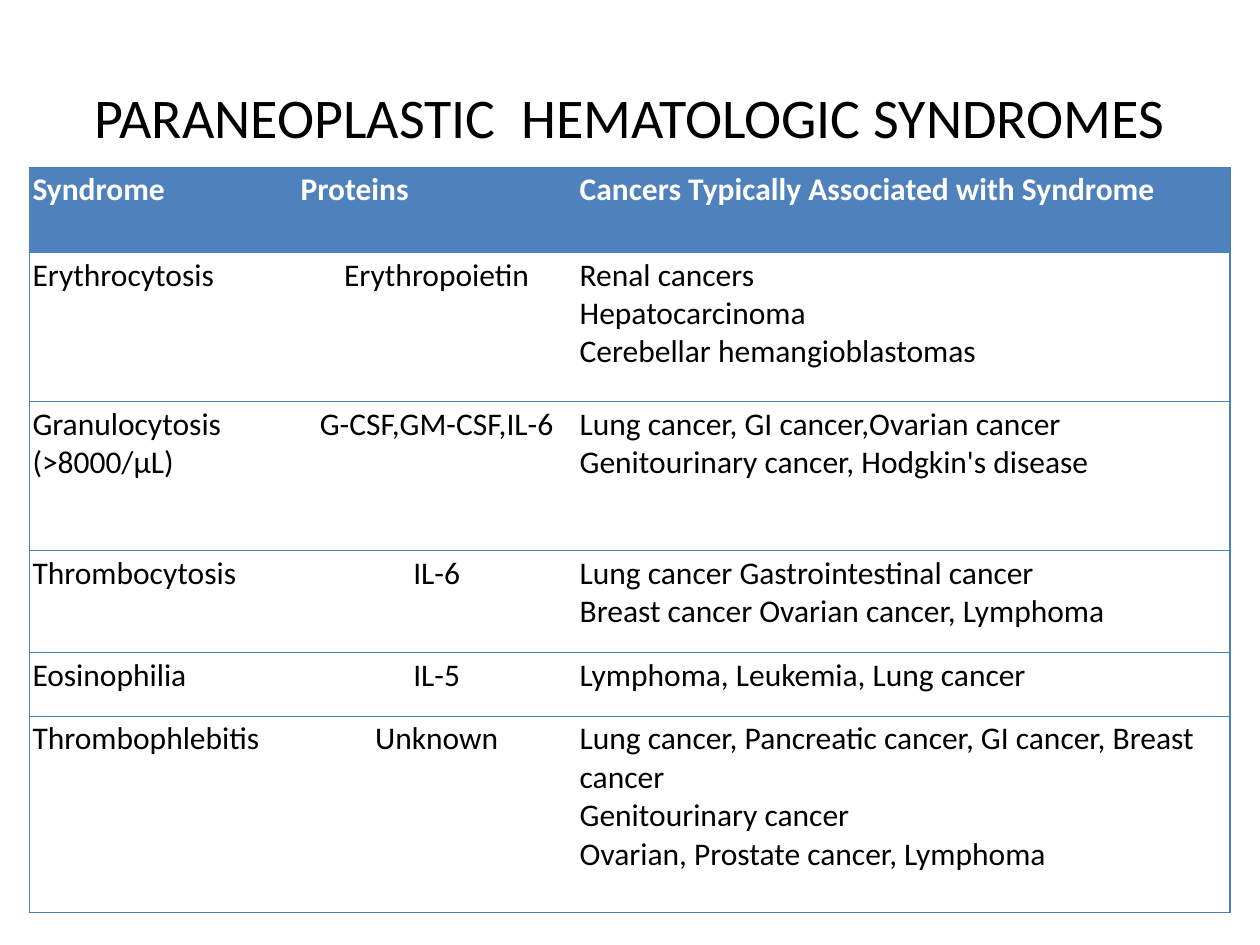
from pptx import Presentation
from pptx.dml.color import RGBColor
from pptx.enum.text import MSO_ANCHOR, PP_ALIGN
from pptx.oxml import parse_xml
from pptx.oxml.ns import nsdecls
from pptx.util import Pt

FONT = "Calibri"
BLACK, WHITE, BLUE, LINE = "000000", "FFFFFF", "4F81BD", "4B7EBC"
COLUMNS = [153.2, 159.5, 373.6]
ROWS = [
    (48.7, ["Syndrome"], ["Proteins"],
     ["Cancers Typically Associated with Syndrome"]),
    (85.2, ["Erythrocytosis"], ["Erythropoietin"],
     ["Renal cancers", "Hepatocarcinoma", "Cerebellar hemangioblastomas"]),
    (85.2, ["Granulocytosis (>8000/μL)"], ["G-CSF,GM-CSF,IL-6"],
     ["Lung cancer, GI cancer,Ovarian cancer",
      "Genitourinary cancer, Hodgkin's disease"]),
    (58.2, ["Thrombocytosis"], ["IL-6"],
     ["Lung cancer Gastrointestinal cancer",
      "Breast cancer Ovarian cancer, Lymphoma"]),
    (36.5, ["Eosinophilia"], ["IL-5"], ["Lymphoma, Leukemia, Lung cancer"]),
    (112, ["Thrombophlebitis"], ["Unknown"],
     ["Lung cancer, Pancreatic cancer, GI cancer, Breast cancer",
      "Genitourinary cancer", "Ovarian, Prostate cancer, Lymphoma"]),
]


def rgb(value):
    return RGBColor.from_string(value)


def write(tf, lines, size=18, color=BLACK, bold=False, align=PP_ALIGN.LEFT):
    tf.word_wrap = True
    for i, line in enumerate(lines):
        p = tf.add_paragraph() if i else tf.paragraphs[0]
        p.alignment = align
        r = p.add_run()
        r.text = line
        r.font.name = FONT
        r.font.size = Pt(size)
        r.font.bold = bold
        r.font.color.rgb = rgb(color)


def set_borders(cell, sides):
    tc_pr = cell._tc.get_or_add_tcPr()
    for i, side in enumerate("LRTB"):
        paint = (f'<a:solidFill><a:srgbClr val="{LINE}"/></a:solidFill>'
                 if side in sides else "<a:noFill/>")
        tc_pr.insert(i, parse_xml(
            f'<a:ln{side} {nsdecls("a")} w="{Pt(0.75)}">{paint}</a:ln{side}>'))


def add_title(s, left, top, width, height):
    sp = s.shapes.add_textbox(Pt(left), Pt(top), Pt(width), Pt(height))
    tf = sp.text_frame
    tf.vertical_anchor = MSO_ANCHOR.MIDDLE
    write(tf, ["PARANEOPLASTIC  HEMATOLOGIC SYNDROMES"], size=32,
          align=PP_ALIGN.CENTER)


def add_syndrome_table(s, left, top, width, height):
    table = s.shapes.add_table(len(ROWS), len(COLUMNS), Pt(left), Pt(top),
                               Pt(width), Pt(height)).table
    for column, column_width in zip(table.columns, COLUMNS):
        column.width = Pt(column_width)
    for i, (row_height, *texts) in enumerate(ROWS):
        table.rows[i].height = Pt(row_height)
        header = i == 0
        for j, lines in enumerate(texts):
            cell = table.cell(i, j)
            cell.margin_left = cell.margin_right = Pt(2)
            cell.margin_top = cell.margin_bottom = Pt(2)
            cell.fill.solid()
            cell.fill.fore_color.rgb = rgb(BLUE if header else WHITE)
            set_borders(cell, ("LTB", "TB", "RTB")[j])
            centred = j == 1 and not header
            write(cell.text_frame, lines, bold=header,
                  color=WHITE if header else BLACK,
                  align=PP_ALIGN.CENTER if centred else PP_ALIGN.LEFT)


def main():
    prs = Presentation()
    prs.slide_width, prs.slide_height = Pt(720), Pt(540)
    s = prs.slides.add_slide(prs.slide_layouts[6])
    add_title(s, 36, 21.6, 648, 90)
    add_syndrome_table(s, 16.6, 95.6, sum(COLUMNS), sum(row[0] for row in ROWS))
    prs.save("out.pptx")


if __name__ == "__main__":
    main()
